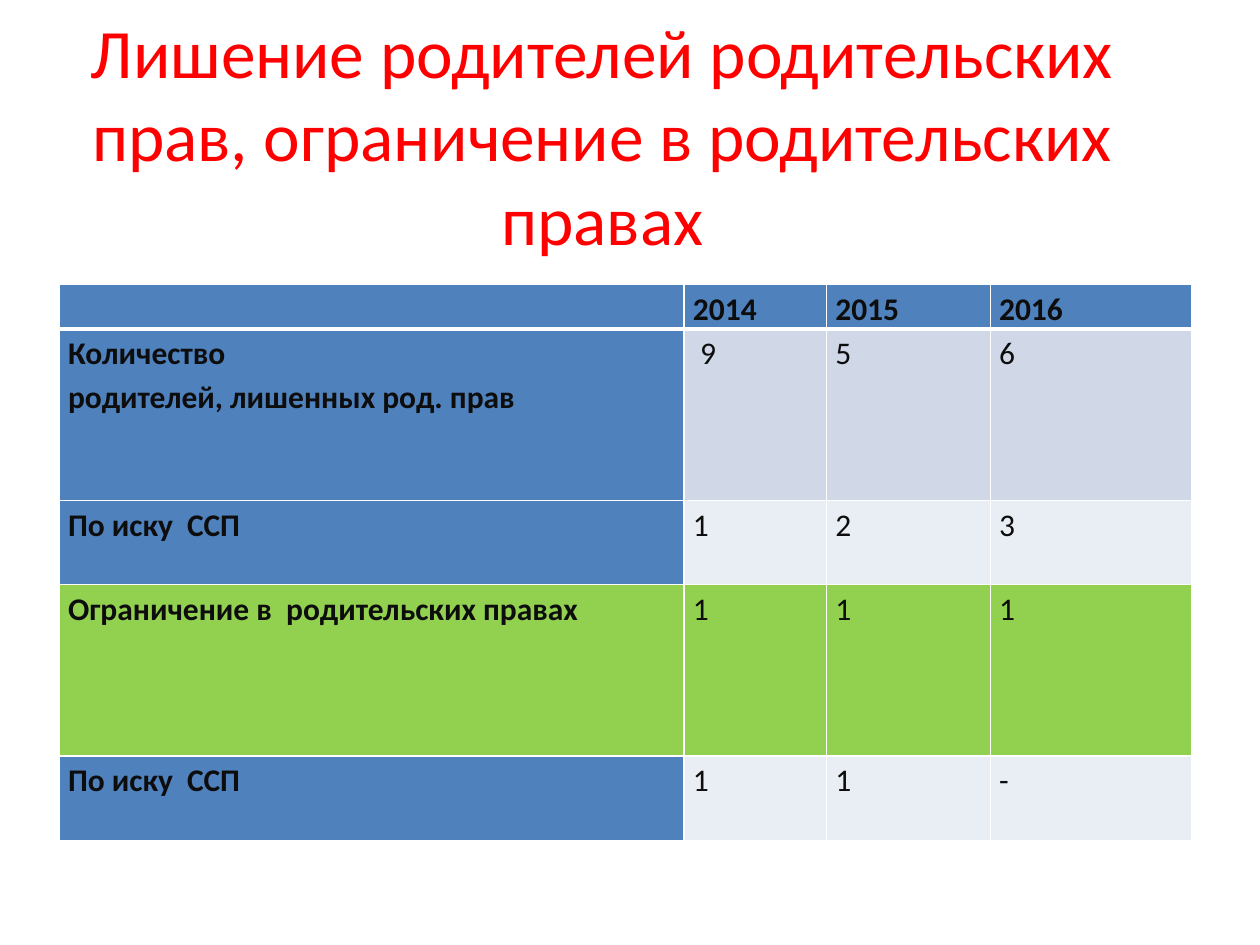
from lxml import etree
from pptx import Presentation, util as u
from pptx.dml.color import RGBColor
from pptx.enum import text
from pptx.oxml.ns import qn

FONT = "Calibri"
RED = RGBColor(0xFF, 0, 0)
INK = RGBColor(0x0D, 0x0D, 0x0D)
WHITE = RGBColor(0xFF, 0xFF, 0xFF)
BLUE = RGBColor(0x4F, 0x81, 0xBD)
GREEN = RGBColor(0x92, 0xD0, 0x50)
DARK = RGBColor(0xD0, 0xD8, 0xE8)
PALE = RGBColor(0xE9, 0xED, 0xF4)

TITLE = "Лишение родителей родительских прав, ограничение в родительских правах"
COLS = [4.96, 1.13, 1.3, 1.6]
# Each row: height, label fill, value fill, cell texts
ROWS = [
    (0.32, BLUE, BLUE, ["", "2014", "2015", "2016"]),
    (1.36, BLUE, DARK,
     ["Количество\nродителей, лишенных род. прав", " 9", "5", "6"]),
    (0.67, BLUE, PALE, ["По иску  ССП", "1", "2", "3"]),
    (1.36, GREEN, GREEN, ["Ограничение в  родительских правах", "1", "1", "1"]),
    (0.67, BLUE, PALE, ["По иску  ССП", "1", "1", "-"]),
]


def style(par, size, color, bold=False):
    font = par.font
    font.name, font.size, font.bold = FONT, u.Pt(size), bold
    font.color.rgb = color


def add_title(slide, box):
    head = slide.shapes.title
    head.left, head.top, head.width, head.height = map(u.Inches, box)
    frame = head.text_frame
    frame.text = TITLE
    frame.word_wrap = True
    frame.auto_size = text.MSO_AUTO_SIZE.NONE
    frame.vertical_anchor = text.MSO_ANCHOR.MIDDLE
    par = frame.paragraphs[0]
    par.alignment = text.PP_ALIGN.CENTER
    style(par, 39.6, RED)


def add_edge(cell, side, width):
    line = etree.SubElement(cell._tc.get_or_add_tcPr(), qn("a:ln" + side),
                            w=str(u.Pt(width)))
    fill = etree.SubElement(line, qn("a:solidFill"))
    etree.SubElement(fill, qn("a:srgbClr"), val=str(WHITE))


def fill_cell(cell, words, fill, bold, edges):
    # Borders come before the fill in the cell properties
    for side, width in edges.items():
        add_edge(cell, side, width)
    cell.fill.solid()
    cell.fill.fore_color.rgb = fill
    cell.margin_left = cell.margin_right = u.Inches(0.07)
    cell.margin_top = cell.margin_bottom = 0
    cell.text_frame.text = words
    for par in cell.text_frame.paragraphs:
        par.line_spacing = 1.15
        style(par, 18, INK, bold)


def add_grid(slide, box):
    frame = slide.shapes.add_table(len(ROWS), len(COLS), *map(u.Inches, box))
    table = frame.table
    for col, width in zip(table.columns, COLS):
        col.width = u.Inches(width)
    for r, (height, label, value, words) in enumerate(ROWS):
        table.rows[r].height = u.Inches(height)
        # A thick rule parts the header from the body
        edges = {"L": 1, "R": 1, "T": 3 if r == 1 else 1, "B": 3 if r == 0 else 1}
        for c, word in enumerate(words):
            fill_cell(table.cell(r, c), word, value if c else label,
                      r == 0 or c == 0, edges)


def main():
    deck = Presentation()
    deck.slide_width, deck.slide_height = u.Inches(10), u.Inches(7.5)
    slide = deck.slides.add_slide(deck.slide_layouts[5])
    add_title(slide, (0.28, 0.44, 9, 1.25))
    add_grid(slide, (0.47, 2.26, sum(COLS), sum(row[0] for row in ROWS)))
    deck.save("out.pptx")


if __name__ == "__main__":
    main()
